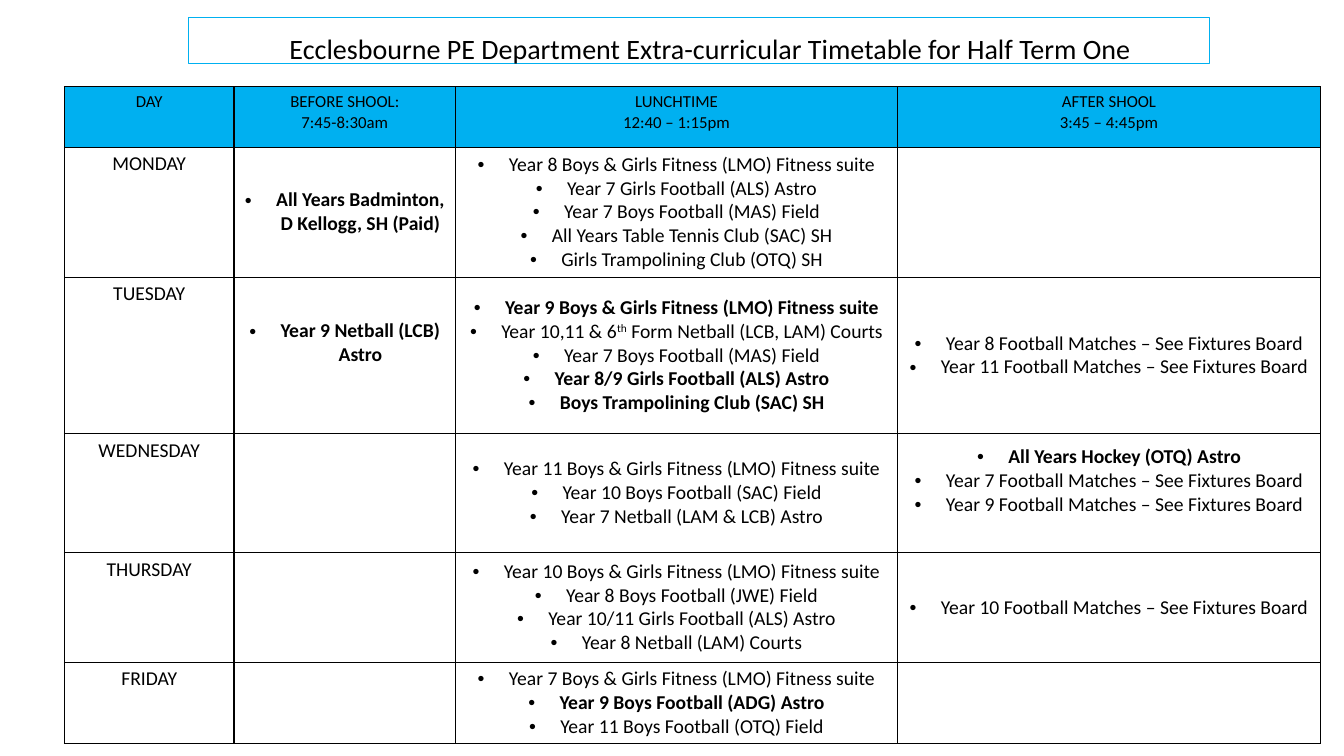
from dataclasses import dataclass, field

from lxml.etree import SubElement
from pptx import Presentation
from pptx.dml.color import RGBColor
from pptx.enum.text import MSO_ANCHOR, MSO_AUTO_SIZE, PP_ALIGN
from pptx.oxml.ns import qn
from pptx.slide import Slide
from pptx.table import _Cell as Cell
from pptx.text.text import TextFrame
from pptx.util import Inches, Pt

BLACK = RGBColor(0x00, 0x00, 0x00)
BLUE = RGBColor(0x00, 0xB0, 0xF0)
FONT = "Calibri"
HANG = Inches(0.31)
WIDTHS = [1.68, 2.2, 4.38, 4.2]
HEIGHTS = [0.6, 1.29, 1.55, 1.18, 1.09, 0.81]


@dataclass
class Club:
    text: str  # letters between carets are raised
    bold: bool = False


@dataclass
class Day:
    name: str
    before: list[Club] = field(default_factory=list)
    lunch: list[Club] = field(default_factory=list)
    after: list[Club] = field(default_factory=list)


# Timetable content
HEADS = [
    ["DAY"],
    ["BEFORE SHOOL:", "7:45-8:30am"],
    ["LUNCHTIME", "12:40 – 1:15pm"],
    ["AFTER SHOOL", "3:45 – 4:45pm"],
]


def fitness(year: int, bold: bool = False) -> Club:
    return Club(f"Year {year} Boys & Girls Fitness (LMO) Fitness suite", bold)


def match(year: int) -> Club:
    return Club(f"Year {year} Football Matches – See Fixtures Board")


DAYS = [
    Day(
        "MONDAY",
        before=[Club("All Years Badminton, D Kellogg, SH (Paid)", True)],
        lunch=[
            fitness(8),
            Club("Year 7 Girls Football (ALS) Astro"),
            Club("Year 7 Boys Football (MAS) Field"),
            Club("All Years Table Tennis Club (SAC) SH"),
            Club("Girls Trampolining Club (OTQ) SH"),
        ],
    ),
    Day(
        "TUESDAY",
        before=[Club("Year 9 Netball (LCB) Astro", True)],
        lunch=[
            fitness(9, True),
            Club("Year 10,11 & 6^th^ Form Netball (LCB, LAM) Courts"),
            Club("Year 7 Boys Football (MAS) Field"),
            Club("Year 8/9 Girls Football (ALS) Astro", True),
            Club("Boys Trampolining Club (SAC) SH", True),
        ],
        after=[match(8), match(11)],
    ),
    Day(
        "WEDNESDAY",
        lunch=[
            fitness(11),
            Club("Year 10 Boys Football (SAC) Field"),
            Club("Year 7 Netball (LAM & LCB) Astro"),
        ],
        after=[Club("All Years Hockey (OTQ) Astro", True), match(7), match(9)],
    ),
    Day(
        "THURSDAY",
        lunch=[
            fitness(10),
            Club("Year 8 Boys Football (JWE) Field"),
            Club("Year 10/11 Girls Football (ALS) Astro"),
            Club("Year 8 Netball (LAM) Courts"),
        ],
        after=[match(10)],
    ),
    Day(
        "FRIDAY",
        lunch=[
            fitness(7),
            Club("Year 9 Boys Football (ADG) Astro", True),
            Club("Year 11 Boys Football (OTQ) Field"),
        ],
    ),
]
# Cells whose text sits half a line above the middle: (row, column)
RAISED = {(2, 1), (3, 3)}


def write(frame: TextFrame, text: str, *, first: bool = True, size: int = 14,
          bold: bool = False, bullet: bool = False) -> None:
    """Write one centred paragraph."""
    para = frame.paragraphs[0] if first else frame.add_paragraph()
    para.alignment = PP_ALIGN.CENTER
    if bullet:
        props = para._p.get_or_add_pPr()
        props.set("marL", str(HANG))
        props.set("indent", str(-HANG))
        SubElement(props, qn("a:buFont"), typeface="Arial")
        SubElement(props, qn("a:buChar"), char="•")
    for i, part in enumerate(text.split("^")):
        run = para.add_run()
        run.text = part
        run.font.name = FONT
        run.font.size = Pt(size)
        run.font.bold = bold
        run.font.color.rgb = BLACK
        if i % 2:
            run._r.get_or_add_rPr().set("baseline", "30000")


def border(cell: Cell) -> None:
    props = cell._tc.get_or_add_tcPr()
    for side in ("lnL", "lnR", "lnT", "lnB"):
        line = SubElement(props, qn(f"a:{side}"), w=str(Pt(1)))
        fill = SubElement(line, qn("a:solidFill"))
        SubElement(fill, qn("a:srgbClr"), val=str(BLACK))


def add_title(slide: Slide) -> None:
    title = slide.shapes.title
    title.left, title.top = Inches(1.87), Inches(0.17)
    title.width, title.height = Inches(10.13), Inches(0.46)
    title.line.color.rgb = BLUE
    title.line.width = Pt(0.75)
    frame = title.text_frame
    frame.auto_size = MSO_AUTO_SIZE.NONE
    frame.word_wrap = True
    frame.vertical_anchor = MSO_ANCHOR.TOP
    frame.margin_left = Inches(0.32)
    frame.margin_top, frame.margin_bottom = Inches(0.14), 0
    write(frame, "Ecclesbourne PE Department Extra-curricular Timetable "
          "for Half Term One", size=20)


def add_grid(slide: Slide) -> None:
    table = slide.shapes.add_table(
        len(HEIGHTS), len(WIDTHS), Inches(0.64), Inches(0.86),
        Inches(sum(WIDTHS)), Inches(sum(HEIGHTS))).table
    table.first_row = table.horz_banding = False
    for col, width in zip(table.columns, WIDTHS):
        col.width = Inches(width)
    for row, height in zip(table.rows, HEIGHTS):
        row.height = Inches(height)
    for cell in table.iter_cells():
        border(cell)
        cell.fill.background()

    # Header row
    for c, lines in enumerate(HEADS):
        cell = table.cell(0, c)
        cell.fill.solid()
        cell.fill.fore_color.rgb = BLUE
        for i, text in enumerate(lines):
            write(cell.text_frame, text, first=i == 0, size=12)

    # Day rows
    for r, day in enumerate(DAYS, 1):
        write(table.cell(r, 0).text_frame, day.name)
        for c, clubs in enumerate((day.before, day.lunch, day.after), 1):
            cell = table.cell(r, c)
            cell.vertical_anchor = MSO_ANCHOR.MIDDLE
            if (r, c) in RAISED:
                cell.margin_bottom = Inches(0.29)
            for i, club in enumerate(clubs):
                write(cell.text_frame, club.text, first=i == 0,
                      bold=club.bold, bullet=True)


def main() -> None:
    deck = Presentation()
    deck.slide_width, deck.slide_height = Inches(13.33), Inches(7.5)
    slide = deck.slides.add_slide(deck.slide_layouts[5])
    add_title(slide)
    add_grid(slide)
    deck.save("out.pptx")


if __name__ == "__main__":
    main()
